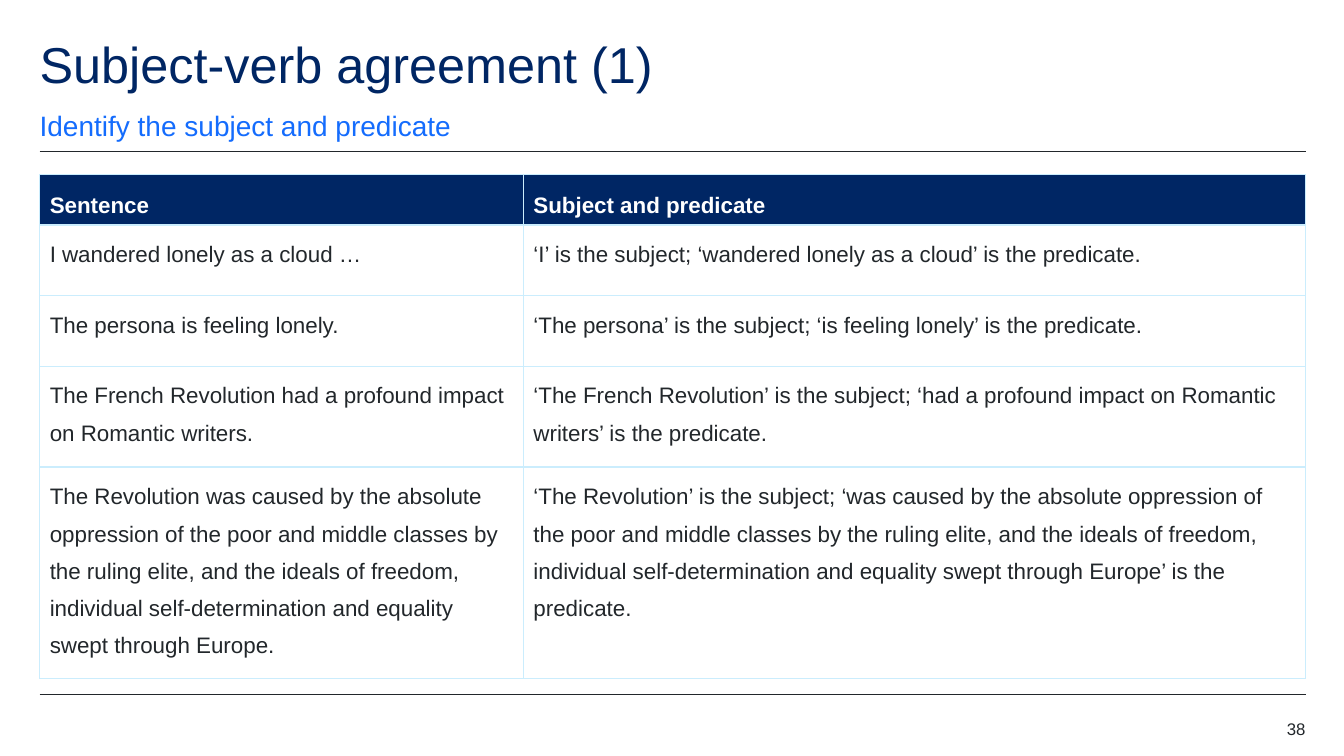
from dataclasses import dataclass

from lxml import etree
from pptx import Presentation
from pptx.dml.color import RGBColor
from pptx.enum.shapes import MSO_CONNECTOR
from pptx.enum.text import MSO_ANCHOR, PP_ALIGN
from pptx.oxml.ns import qn
from pptx.util import Cm, Pt

LINE = MSO_CONNECTOR.STRAIGHT
TOP, MIDDLE, BOTTOM = MSO_ANCHOR.TOP, MSO_ANCHOR.MIDDLE, MSO_ANCHOR.BOTTOM
LEFT, RIGHT = PP_ALIGN.LEFT, PP_ALIGN.RIGHT


@dataclass(frozen=True)
class Theme:
    font: str = "Arial"
    navy: str = "002664"
    blue: str = "146CFD"
    pale: str = "CBEDFD"
    ink: str = "22272B"
    white: str = "FFFFFF"
    title: int = 36
    lead: int = 20
    body: int = 16
    note: int = 12


THEME = Theme()
COLS = (12.19, 19.71)
HEIGHTS = (1.02, 1.78, 1.78, 2.54, 4.83)
ROWS = (
    ("Sentence", "Subject and predicate"),
    ("I wandered lonely as a cloud …",
     "‘I’ is the subject; ‘wandered lonely as a cloud’ is the predicate."),
    ("The persona is feeling lonely.",
     "‘The persona’ is the subject; ‘is feeling lonely’ is the predicate."),
    ("The French Revolution had a profound impact on Romantic writers.",
     "‘The French Revolution’ is the subject; ‘had a profound impact on "
     "Romantic writers’ is the predicate."),
    ("The Revolution was caused by the absolute oppression of the poor and "
     "middle classes by the ruling elite, and the ideals of freedom, "
     "individual self-determination and equality swept through Europe.",
     "‘The Revolution’ is the subject; ‘was caused by the absolute oppression "
     "of the poor and middle classes by the ruling elite, and the ideals of "
     "freedom, individual self-determination and equality swept through "
     "Europe’ is the predicate."),
)


def write(frame, text, size, color, bold=False, align=LEFT, space=1.0, after=0):
    frame.word_wrap = True
    para = frame.paragraphs[0]
    para.alignment = align
    para.line_spacing = space
    para.space_after = Pt(after)
    run = para.add_run()
    run.text = text
    run.font.name = THEME.font
    run.font.size = Pt(size)
    run.font.bold = bold
    run.font.color.rgb = RGBColor.from_string(color)


def label(slide, box, text, size, color, anchor=TOP, **style):
    frame = slide.shapes.add_textbox(*map(Cm, box)).text_frame
    frame.margin_left = frame.margin_right = 0
    frame.margin_top = frame.margin_bottom = 0
    frame.vertical_anchor = anchor
    write(frame, text, size, color, **style)


def rule(slide, left, top, width):
    line = slide.shapes.add_connector(
        LINE, Cm(left), Cm(top), Cm(left + width), Cm(top))
    line.line.color.rgb = RGBColor.from_string(THEME.ink)
    line.line.width = Pt(0.5)
    etree.SubElement(line._element.spPr, qn("a:effectLst"))


def border(cell):
    props = cell._tc.get_or_add_tcPr()
    for spot, side in enumerate(("lnL", "lnR", "lnT", "lnB")):
        edge = etree.Element(qn("a:" + side), w=str(Pt(1)))
        fill = etree.SubElement(edge, qn("a:solidFill"))
        etree.SubElement(fill, qn("a:srgbClr"), val=THEME.pale)
        props.insert(spot, edge)


def header(slide, left, top, width, height):
    wide = width - 3.9
    label(slide, (left, top, wide, 1.52), "Subject-verb agreement (1)",
          THEME.title, THEME.navy, space=0.9)
    label(slide, (left, top + 1.72, wide, 0.86),
          "Identify the subject and predicate", THEME.lead, THEME.blue,
          anchor=BOTTOM, space=1.5, after=12)
    rule(slide, left, top + height, width)


def grid(slide, left, top, width, height):
    table = slide.shapes.add_table(
        len(ROWS), len(COLS), Cm(left), Cm(top), Cm(width), Cm(height)).table
    table.horz_banding = False
    for col, wide in zip(table.columns, COLS):
        col.width = Cm(wide)
    for row, high, texts in zip(table.rows, HEIGHTS, ROWS):
        row.height = Cm(high)
        head = texts is ROWS[0]
        for cell, text in zip(row.cells, texts):
            cell.vertical_anchor = MIDDLE if head else TOP
            if head:
                cell.fill.solid()
                cell.fill.fore_color.rgb = RGBColor.from_string(THEME.navy)
            else:
                cell.fill.background()
            border(cell)
            write(cell.text_frame, text, THEME.body,
                  THEME.white if head else THEME.ink,
                  bold=head, space=1.5, after=6)


def footer(slide, left, top, width):
    rule(slide, left, top, width)
    label(slide, (left + width - 2, top + 0.61, 2, 0.51), "38",
          THEME.note, THEME.ink, align=RIGHT)


def main():
    deck = Presentation()
    deck.slide_width, deck.slide_height = Cm(33.87), Cm(19.05)
    slide = deck.slides.add_slide(deck.slide_layouts[6])
    left, width = 1, sum(COLS)
    header(slide, left, 1, width, 2.81)
    grid(slide, left, 4.4, width, sum(HEIGHTS))
    footer(slide, left, 17.5, width)
    deck.save("out.pptx")


if __name__ == "__main__":
    main()
